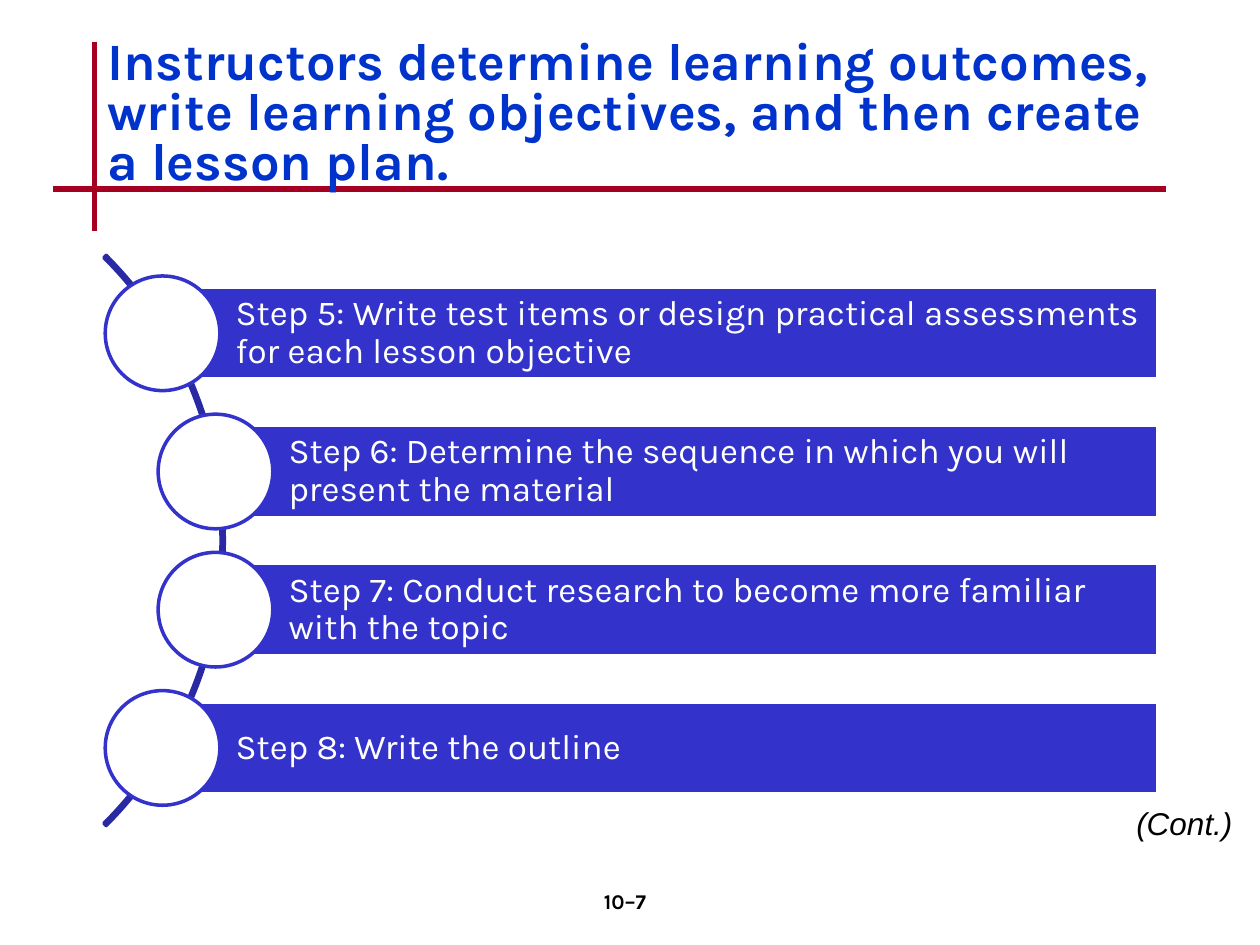
from dataclasses import dataclass

from lxml import etree
from pptx import Presentation
from pptx.dml.color import RGBColor
from pptx.enum.shapes import MSO_CONNECTOR, MSO_SHAPE
from pptx.enum.text import MSO_ANCHOR, MSO_AUTO_SIZE, PP_ALIGN
from pptx.oxml.ns import qn
from pptx.util import Inches, Pt


@dataclass(frozen=True)
class Theme:
    title: RGBColor = RGBColor.from_string("0033CC")
    rule: RGBColor = RGBColor.from_string("A50021")
    arc: RGBColor = RGBColor.from_string("2929A3")
    bar: RGBColor = RGBColor.from_string("3333CC")
    white: RGBColor = RGBColor.from_string("FFFFFF")
    black: RGBColor = RGBColor.from_string("000000")
    font: str = "Karla"
    note_font: str = "Arial"
    title_size: int = 30
    step_size: int = 20
    note_size: int = 18
    number_size: int = 12


theme = Theme()


def write_text(box, text, size, color, font=theme.font, bold=False, italic=False,
               align=PP_ALIGN.LEFT, anchor=MSO_ANCHOR.TOP, spacing=1.0, wrap=True,
               margins=(0.1, 0.05, 0.1, 0.05)):
    frame = box.text_frame
    frame.word_wrap = wrap
    frame.auto_size = MSO_AUTO_SIZE.NONE if wrap else MSO_AUTO_SIZE.SHAPE_TO_FIT_TEXT
    frame.vertical_anchor = anchor
    frame.margin_left, frame.margin_top, frame.margin_right, frame.margin_bottom = map(Inches, margins)
    para = frame.paragraphs[0]
    para.alignment = align
    para.line_spacing = spacing
    para.space_before = Pt(0)
    span = para.add_run()
    span.text = text
    span.font.name = font
    span.font.size = Pt(size)
    span.font.bold = bold
    span.font.italic = italic
    span.font.color.rgb = color


def add_outlined(kind, left, top, width, height, line, fill=None):
    shape = page.shapes.add_shape(kind, Inches(left), Inches(top), Inches(width), Inches(height))
    shape.shadow.inherit = False
    shape.line.color.rgb = line
    shape.line.width = Pt(2)
    if fill is None:
        shape.fill.background()
    else:
        shape.fill.solid()
        shape.fill.fore_color.rgb = fill
    return shape


deck = Presentation()
deck.slide_width = Inches(10)
deck.slide_height = Inches(7.5)
page = deck.slides.add_slide(deck.slide_layouts[5])

for start_x, start_y, end_x, end_y in ((0.75, 0.33, 0.75, 1.83), (0.42, 1.5, 9.25, 1.5)):
    rule = page.shapes.add_connector(MSO_CONNECTOR.STRAIGHT, Inches(start_x), Inches(start_y),
                                     Inches(end_x), Inches(end_y))
    rule.line.color.rgb = theme.rule
    rule.line.width = Pt(3)
    etree.SubElement(rule._element.spPr, qn("a:effectLst"))

arc = add_outlined(MSO_SHAPE.BLOCK_ARC, -4.62, 1.09, 6.4, 6.4, theme.arc)
for index, value in enumerate((189, 27, 0.004)):
    arc.adjustments[index] = value

steps = (
    (1.29, "Step 5: Write test items or design practical assessments for each lesson objective"),
    (1.71, "Step 6: Determine the sequence in which you will present the material"),
    (1.71, "Step 7: Conduct research to become more familiar with the topic"),
    (1.29, "Step 8: Write the outline"),
)
first_top, pitch, bar_right = 2.28, 1.097, 9.19
bar_height, circle_size = 0.73, 0.91
for index, (left, text) in enumerate(steps):
    top = first_top + index * pitch
    bar = add_outlined(MSO_SHAPE.RECTANGLE, left, top, bar_right - left, bar_height,
                       theme.white, theme.bar)
    write_text(bar, text, theme.step_size, theme.white, anchor=MSO_ANCHOR.MIDDLE,
               spacing=0.9, margins=(0.58, 0.06, 0.06, 0.06))
    add_outlined(MSO_SHAPE.OVAL, left - circle_size / 2, top + (bar_height - circle_size) / 2,
                 circle_size, circle_size, theme.bar, theme.white)

title = page.shapes.title
title.left, title.top, title.width, title.height = map(Inches, (0.75, 0.25, 8.5, 1.33))
write_text(title, "Instructors determine learning outcomes, write learning objectives, "
           "and then create a lesson plan.", theme.title_size, theme.title, bold=True,
           anchor=MSO_ANCHOR.MIDDLE, spacing=0.8)
page.shapes._spTree.append(title._element)

number = page.shapes.add_textbox(Inches(3.92), Inches(7), Inches(2.08), Inches(0.5))
write_text(number, "10–7", theme.number_size, theme.black, bold=True, align=PP_ALIGN.CENTER)

note = page.shapes.add_textbox(Inches(8.92), Inches(6.33), Inches(0.97), Inches(0.4))
write_text(note, "(Cont.)", theme.note_size, theme.black, font=theme.note_font,
           italic=True, wrap=False)

deck.save("out.pptx")
